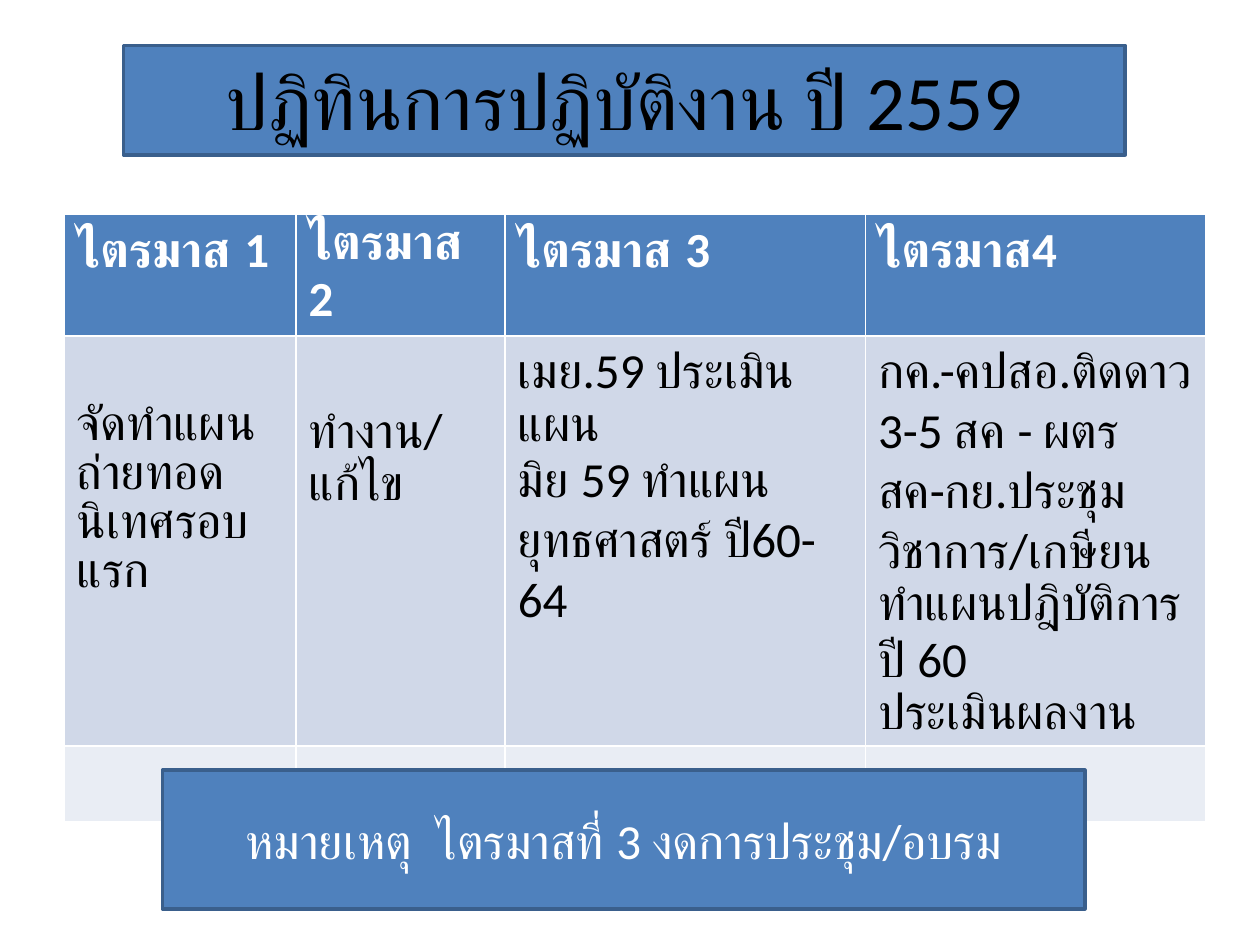
from pptx import Presentation
from pptx.dml.color import RGBColor
from pptx.enum.shapes import MSO_SHAPE
from pptx.enum.text import MSO_ANCHOR, PP_ALIGN
from pptx.util import Inches, Pt

RECT = MSO_SHAPE.RECTANGLE
MIDDLE = MSO_ANCHOR.MIDDLE
CENTER = PP_ALIGN.CENTER

BLUE = RGBColor(0x4F, 0x81, 0xBD)
EDGE = RGBColor(0x3A, 0x5F, 0x8C)
BAND = RGBColor(0xD0, 0xD8, 0xE8)
PALE = RGBColor(0xE9, 0xED, 0xF4)
WHITE = RGBColor(0xFF, 0xFF, 0xFF)
BLACK = RGBColor(0, 0, 0)

FONT = "Calibri"
WIDTH, HEIGHT = Inches(10), Inches(7.5)
COLUMNS = (0.184, 0.166, 0.286, 0.27)
ROWS = (0.08, 0.41, 0.08)
ROW_STYLES = ((BLUE, WHITE, True), (BAND, BLACK, False), (PALE, BLACK, False))
LOWERED_TOP = Inches(0.52)

QUARTERS = (
    ("ไตรมาส 1", "จัดทำแผน\nถ่ายทอด\nนิเทศรอบแรก"),
    ("ไตรมาส 2", "ทำงาน/แก้ไข"),
    ("ไตรมาส 3", "เมย.59 ประเมินแผน\nมิย 59 ทำแผนยุทธศาสตร์ ปี60-64"),
    ("ไตรมาส4", "กค.-คปสอ.ติดดาว\n3-5 สค - ผตร\nสค-กย.ประชุมวิชาการ/เกษียน\n"
                "ทำแผนปฎิบัติการ ปี 60\nประเมินผลงาน"),
)


def share(x, y):
    """Turn shares of the slide's width and height into lengths."""
    return int(WIDTH * x), int(HEIGHT * y)


def write(tf, text, size, color, bold=False):
    """Fill a text frame and format all its runs alike."""
    tf.text = text
    for p in tf.paragraphs:
        for r in p.runs:
            r.font.name = FONT
            r.font.size = Pt(size)
            r.font.bold = bold
            r.font.color.rgb = color


def add_banner(s, x, y, w, h, text, size, color):
    """Add a blue outlined box with centred text."""
    sp = s.shapes.add_shape(RECT, *share(x, y), *share(w, h))
    sp.shadow.inherit = False
    sp.fill.solid()
    sp.fill.fore_color.rgb = BLUE
    sp.line.color.rgb = EDGE
    sp.line.width = Pt(2)
    tf = sp.text_frame
    tf.word_wrap = True
    tf.vertical_anchor = MIDDLE
    write(tf, text, size, color)
    tf.paragraphs[0].alignment = CENTER


def add_calendar(s, x, y):
    """Add the table of quarters, with the first two plans set lower."""
    frame = s.shapes.add_table(len(ROWS), len(COLUMNS), *share(x, y),
                               *share(sum(COLUMNS), sum(ROWS)))
    table = frame.table
    for column, w in zip(table.columns, COLUMNS):
        column.width = int(WIDTH * w)
    for row, h, (fill, color, bold) in zip(table.rows, ROWS, ROW_STYLES):
        row.height = int(HEIGHT * h)
        for cell in row.cells:
            cell.fill.solid()
            cell.fill.fore_color.rgb = fill
    for c, texts in enumerate(QUARTERS):
        for r, text in enumerate(texts):
            write(table.cell(r, c).text_frame, text, 28, *ROW_STYLES[r][1:])
    for c in range(2):
        table.cell(1, c).margin_top = LOWERED_TOP


def main():
    """Build the work calendar slide."""
    prs = Presentation()
    prs.slide_width, prs.slide_height = WIDTH, HEIGHT
    s = prs.slides.add_slide(prs.slide_layouts[6])
    add_calendar(s, 0.051, 0.227)
    add_banner(s, 0.098, 0.048, 0.795, 0.116,
               "ปฏิทินการปฏิบัติงาน ปี 2559", 44, BLACK)
    add_banner(s, 0.129, 0.815, 0.732, 0.147,
               "หมายเหตุ  ไตรมาสที่ 3 งดการประชุม/อบรม", 28, WHITE)
    prs.save("out.pptx")


if __name__ == "__main__":
    main()
